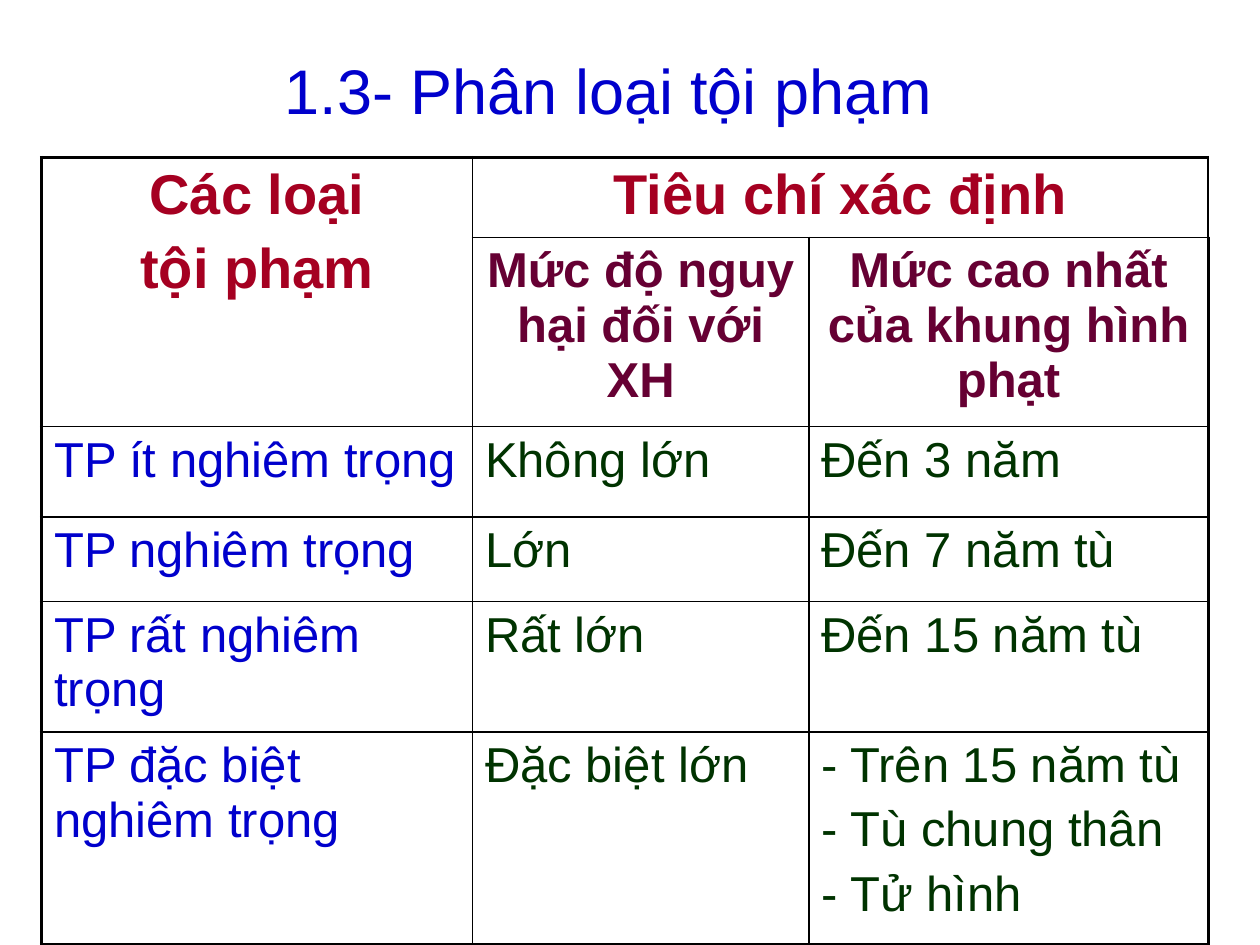
from lxml import etree
from pptx import Presentation
from pptx.dml.color import RGBColor
from pptx.enum.text import MSO_ANCHOR, PP_ALIGN
from pptx.oxml.ns import qn
from pptx.util import Inches, Pt

CENTER, LEFT = PP_ALIGN.CENTER, PP_ALIGN.LEFT
MIDDLE = MSO_ANCHOR.MIDDLE

# Content
TITLE = "1.3- Phân loại tội phạm"
ROWS = [
    ["Các loại\ntội phạm", "Tiêu chí xác định", ""],
    ["", "Mức độ nguy hại đối với XH", "Mức cao nhất của khung hình phạt"],
    ["TP ít nghiêm trọng", "Không lớn", "Đến 3 năm"],
    ["TP nghiêm trọng", "Lớn", "Đến 7 năm tù"],
    ["TP rất nghiêm trọng", "Rất lớn", "Đến 15 năm tù"],
    ["TP đặc biệt nghiêm trọng", "Đặc biệt lớn",
     "- Trên 15 năm tù\n- Tù chung thân\n- Tử hình"],
]
WIDTHS = [3.42, 2.67, 3.17]
HEIGHTS = [0.63, 1.4, 0.72, 0.67, 0.97, 1.69]
BLUE, RED, PLUM, GREEN = "0000CC", "A50021", "660033", "003300"
BLACK, WHITE = "000000", "FFFFFF"
THIN, THICK = 1, 2.25


def rgb(code):
    return RGBColor.from_string(code)


def write(frame, text, size, color, bold=False, align=LEFT):
    frame.text = text
    for i, para in enumerate(frame.paragraphs):
        para.alignment = align
        para.space_before = Pt(0.2 * size if i else 0)
        font = para.font
        font.name, font.size, font.bold = "Arial", Pt(size), bold
        font.color.rgb = rgb(color)


def style(row, col):
    """Size, colour, bold and alignment of a cell."""
    if row == 0:
        return 32, RED, True, CENTER
    if row == 1:
        return 28, PLUM, True, CENTER
    return 28, GREEN if col else BLUE, False, LEFT


def border(cell, row, col):
    """Thick lines on the outer edge, thin ones inside."""
    props = cell._tc.get_or_add_tcPr()
    edges = [("a:lnL", col == 0), ("a:lnR", col == len(WIDTHS) - 1),
             ("a:lnT", row == 0), ("a:lnB", row == len(ROWS) - 1)]
    for i, (tag, outer) in enumerate(edges):
        line = etree.Element(qn(tag), w=str(Pt(THICK if outer else THIN)))
        fill = etree.SubElement(line, qn("a:solidFill"))
        etree.SubElement(fill, qn("a:srgbClr"), val=BLACK)
        props.insert(i, line)


prs = Presentation()
prs.slide_width, prs.slide_height = Inches(10), Inches(7.5)
slide = prs.slides.add_slide(prs.slide_layouts[6])

# Title
box = slide.shapes.add_textbox(Inches(0.33), Inches(0.33), Inches(9), Inches(0.75))
frame = box.text_frame
frame.word_wrap = True
frame.vertical_anchor = MIDDLE
write(frame, TITLE, 36, BLUE, align=CENTER)

# Table
table = slide.shapes.add_table(
    len(ROWS), len(WIDTHS), Inches(0.33), Inches(1.25),
    Inches(sum(WIDTHS)), Inches(sum(HEIGHTS))).table
for column, width in zip(table.columns, WIDTHS):
    column.width = Inches(width)
for line, height in zip(table.rows, HEIGHTS):
    line.height = Inches(height)

# Merged headings
table.cell(0, 0).merge(table.cell(1, 0))
table.cell(0, 1).merge(table.cell(0, 2))

# Cells
for r, texts in enumerate(ROWS):
    for c, text in enumerate(texts):
        cell = table.cell(r, c)
        cell.fill.solid()
        cell.fill.fore_color.rgb = rgb(WHITE)
        border(cell, r, c)
        if text:
            write(cell.text_frame, text, *style(r, c))

prs.save("out.pptx")
